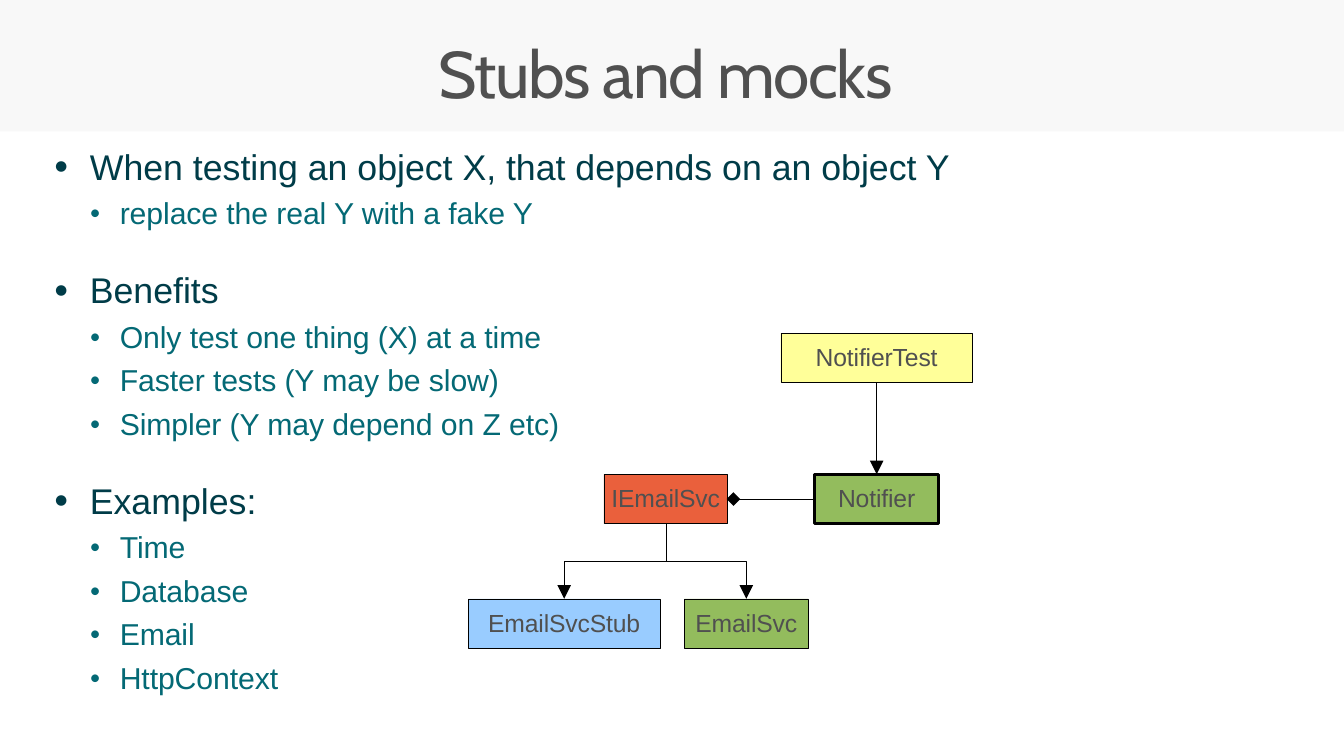
from dataclasses import dataclass

from lxml.etree import SubElement
from pptx import Presentation
from pptx.dml.color import RGBColor as RGB
from pptx.enum.shapes import MSO_CONNECTOR as LINK, MSO_SHAPE as SHAPE
from pptx.enum.text import MSO_ANCHOR as ANCHOR, PP_ALIGN as ALIGN
from pptx.oxml.ns import qn
from pptx.util import Cm, Pt

# Content
TITLE = "Stubs and mocks"
OUTLINE = [
    ("When testing an object X, that depends on an object Y",
     ["replace the real Y with a fake Y"]),
    ("Benefits",
     ["Only test one thing (X) at a time",
      "Faster tests (Y may be slow)",
      "Simpler (Y may depend on Z etc)"]),
    ("Examples:",
     ["Time", "Database", "Email", "HttpContext"]),
]
# Class name: (centre x, row, width, fill, border in points)
CLASSES = {
    "NotifierTest": (22.53, 0, 4.93, "FFFF99", 0.25),
    "Notifier": (22.53, 1, 3.18, "93BC5D", 2.15),
    "IEmailSvc": (17.11, 1, 3.18, "EA603C", 0.25),
    "EmailSvcStub": (14.5, 2, 4.93, "99CCFF", 0.25),
    "EmailSvc": (19.18, 2, 3.18, "93BC5D", 0.25),
}
IMPLEMENTATIONS = ["EmailSvcStub", "EmailSvc"]

# Layout in cm
WIDTH, HEIGHT = 34.54, 19.43
HEADER_H = 3.38
ROW_TOPS = [8.56, 12.19, 15.39]
BOX_H = 1.27
DIAMOND_HALF = 0.15
# Outline level: (text margin, hanging indent)
INDENTS = [(0.91, 0.91), (1.68, 0.76)]


@dataclass(frozen=True)
class Theme:
    header: str = "F8F8F8"
    panel: str = "FFFFFF"
    grey: str = "505050"
    line: str = "000000"
    levels: tuple = ("003C48", "046975")
    level_sizes: tuple = (26, 22)
    level_gaps: tuple = (27.1, 5.3)
    level_spacings: tuple = (0, -7)
    bullet_percents: tuple = (63500, 54500)
    title_font: str = "Cabin"
    body_font: str = "Arial"
    bullet_font: str = "Calibri"
    title_size: int = 48
    label_size: int = 18
    thin: float = 0.25


T = Theme()


def rgb(value):
    return RGB.from_string(value)


def style_font(p, name, size, color, spacing=0):
    for r in p.runs:
        r.font.name, r.font.size = name, Pt(size)
        r.font.color.rgb = rgb(color)
        r.font._element.set("spc", str(spacing))


def add_text_box(slide, left, top, width, height):
    tf = slide.shapes.add_textbox(Cm(left), Cm(top), Cm(width), Cm(height)).text_frame
    tf.word_wrap = True
    tf.margin_left = tf.margin_right = tf.margin_top = tf.margin_bottom = 0
    return tf


def add_box(slide, left, top, width, height, fill):
    s = slide.shapes.add_shape(SHAPE.RECTANGLE, Cm(left), Cm(top), Cm(width), Cm(height))
    s.shadow.inherit = False
    s.fill.solid()
    s.fill.fore_color.rgb = rgb(fill)
    s.line.fill.background()
    return s


def style_line(s, width, head=None):
    s.line.color.rgb = rgb(T.line)
    s.line.width = Pt(width)
    if head:
        ln = s._element.spPr.find(qn("a:ln"))
        SubElement(ln, qn("a:tailEnd"), type=head, w="lg", len="lg")


def add_link(slide, start, end, head):
    s = slide.shapes.add_connector(LINK.STRAIGHT, *map(Cm, start + end))
    style_line(s, T.thin, head)
    SubElement(s._element.spPr, qn("a:effectLst"))
    return s


def add_elbow(slide, start, end):
    middle = (start[1] + end[1]) / 2
    builder = slide.shapes.build_freeform(*map(Cm, start))
    corners = [(start[0], middle), (end[0], middle), end]
    builder.add_line_segments([(Cm(x), Cm(y)) for x, y in corners], close=False)
    s = builder.convert_to_shape()
    s.shadow.inherit = False
    s.fill.background()
    style_line(s, T.thin, "triangle")


def add_title(slide):
    tf = add_text_box(slide, 0.59, 0.71, 33.02, 2.54)
    tf.vertical_anchor = ANCHOR.MIDDLE
    tf.text = TITLE
    p = tf.paragraphs[0]
    p.alignment, p.line_spacing = ALIGN.CENTER, 0.9
    style_font(p, T.title_font, T.title_size, T.grey, -100)


def add_outline(slide):
    tf = add_text_box(slide, 1.4, 3.72, 26, 14.4)
    lines = [(level, text) for heading, points in OUTLINE
             for level, text in [(0, heading)] + [(1, point) for point in points]]
    for i, (level, text) in enumerate(lines):
        p = tf.add_paragraph() if i else tf.paragraphs[0]
        p.text = text
        margin, hang = INDENTS[level]
        pPr = p._p.get_or_add_pPr()
        pPr.set("marL", str(Cm(margin)))
        pPr.set("indent", str(-Cm(hang)))
        SubElement(pPr, qn("a:buSzPct"), val=str(T.bullet_percents[level]))
        SubElement(pPr, qn("a:buFont"), typeface=T.bullet_font)
        SubElement(pPr, qn("a:buChar"), char="●")
        if i:
            p.space_before = Pt(T.level_gaps[level])
        style_font(p, T.body_font, T.level_sizes[level], T.levels[level],
                   T.level_spacings[level])


def add_class(slide, name):
    center, row, width, fill, border = CLASSES[name]
    s = add_box(slide, center - width / 2, ROW_TOPS[row], width, BOX_H, fill)
    style_line(s, border)
    tf = s.text_frame
    tf.margin_left = tf.margin_right = tf.margin_top = 0
    tf.margin_bottom = Cm(0.05)
    tf.vertical_anchor = ANCHOR.MIDDLE
    tf.word_wrap = False
    tf.text = name
    p = tf.paragraphs[0]
    p.alignment = ALIGN.CENTER
    style_font(p, T.body_font, T.label_size, T.grey, -10)
    return s


def top_of(name):
    center, row = CLASSES[name][:2]
    return center, ROW_TOPS[row]


def bottom_of(name):
    center, top = top_of(name)
    return center, top + BOX_H


def add_diagram(slide):
    boxes = {name: add_class(slide, name) for name in CLASSES}

    # The test calls the notifier
    call = add_link(slide, bottom_of("NotifierTest"), top_of("Notifier"), "triangle")
    call.begin_connect(boxes["NotifierTest"], 2)
    call.end_connect(boxes["Notifier"], 0)

    # The notifier holds the interface
    middle = ROW_TOPS[1] + BOX_H / 2
    left = CLASSES["Notifier"][0] - CLASSES["Notifier"][2] / 2
    right = CLASSES["IEmailSvc"][0] + CLASSES["IEmailSvc"][2] / 2
    add_link(slide, (left, middle), (right + DIAMOND_HALF, middle), "diamond")

    # The interface leads to its implementations
    for name in IMPLEMENTATIONS:
        add_elbow(slide, bottom_of("IEmailSvc"), top_of(name))


def main():
    prs = Presentation()
    prs.slide_width, prs.slide_height = Cm(WIDTH), Cm(HEIGHT)
    slide = prs.slides.add_slide(prs.slide_layouts[6])
    slide.background.fill.solid()
    slide.background.fill.fore_color.rgb = rgb(T.header)
    add_box(slide, 0, HEADER_H, WIDTH, HEIGHT - HEADER_H, T.panel)
    add_title(slide)
    add_outline(slide)
    add_diagram(slide)
    prs.save("out.pptx")


if __name__ == "__main__":
    main()
